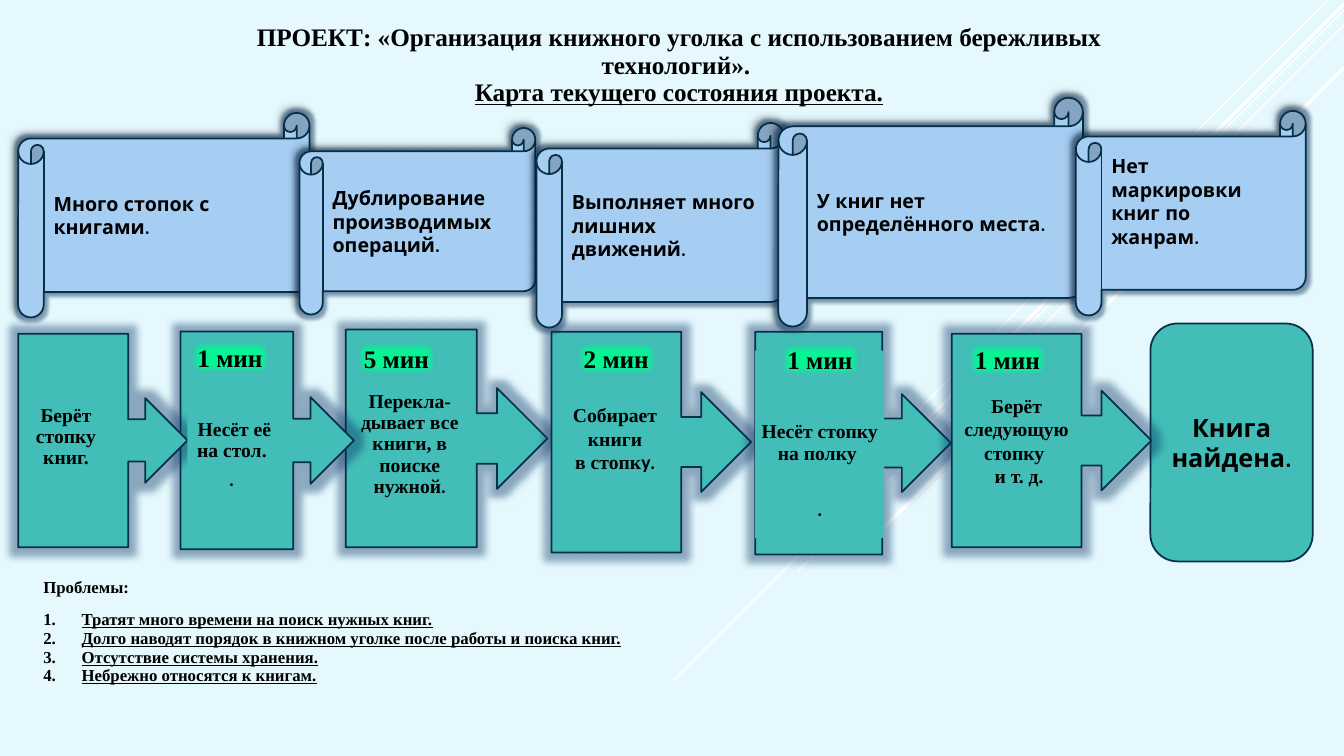
import pptx
import pptx.util
import pptx.dml.color
import pptx.enum.shapes
import pptx.enum.text
import pptx.oxml
import pptx.oxml.ns
from pptx.util import Inches

SHAPES = pptx.enum.shapes.MSO_SHAPE
ALIGN = pptx.enum.text.PP_ALIGN
ANCHOR = pptx.enum.text.MSO_ANCHOR
DRAWING = pptx.oxml.ns.nsdecls("a")
SERIF, ROUNDED = "Times New Roman", "Quicksand"
TEAL, SKY, GREEN, NAVY = "42BDB7", "A6CEF3", "08F696", "043148"
TIGHT = (0.01, 0.01, 0.01, 0.01)
ROOMY = (0.1, 0.05, 0.1, 0.05)

GLOW = '<a:glow rad="{}"><a:srgbClr val="052F61"><a:alpha val="40000"/></a:srgbClr></a:glow>'
STEP_GLOW = GLOW.format(139700)
SCROLL_GLOW = GLOW.format(63500) + (
    '<a:outerShdw blurRad="50800" dist="38100" dir="13500000">'
    '<a:srgbClr val="000000"><a:alpha val="40000"/></a:srgbClr></a:outerShdw>')
SOFT_EDGE = '<a:softEdge rad="63500"/>'


def color(value):
    return pptx.dml.color.RGBColor.from_string(value)


class ProcessMap:
    def __init__(self, page):
        self.page = page

    def effects(self, shape, content=""):
        properties = shape._element.spPr
        for old in properties.findall(pptx.oxml.ns.qn("a:effectLst")):
            properties.remove(old)
        properties.append(pptx.oxml.parse_xml(
            f"<a:effectLst {DRAWING}>{content}</a:effectLst>"))

    def ray(self, start, end, width):
        line = self.page.shapes.add_connector(
            pptx.enum.shapes.MSO_CONNECTOR.STRAIGHT, *map(Inches, start + end))
        line.line.color.rgb = color("FFFFFF")
        line.line.width = pptx.util.Pt(width)
        self.effects(line)

    def shape(self, kind, place, fill, outline=False, effects=""):
        shape = self.page.shapes.add_shape(kind, *map(Inches, place))
        shape.fill.solid()
        shape.fill.fore_color.rgb = color(fill)
        if outline:
            shape.line.color.rgb = color(NAVY)
            shape.line.width = pptx.util.Pt(1.25)
        else:
            shape.line.fill.background()
        self.effects(shape, effects)
        return shape

    def text_box(self, place):
        return self.page.shapes.add_textbox(*map(Inches, place))

    def style(self, para, size=14, font=SERIF, underline=None):
        para.font.size = pptx.util.Pt(size)
        para.font.name = font
        para.font.bold = True
        para.font.underline = underline
        para.font.color.rgb = color("000000")

    def put_text(self, box, texts, size=14, font=SERIF, align=ALIGN.CENTER,
                 insets=ROOMY, anchor=ANCHOR.MIDDLE, spacing=None, after=None, wrap=True):
        """Each text is a string or a list of (words, font) spans."""
        frame = box.text_frame
        frame.word_wrap = wrap
        frame.vertical_anchor = anchor
        (frame.margin_left, frame.margin_top,
         frame.margin_right, frame.margin_bottom) = map(Inches, insets)
        for index, text in enumerate(texts):
            para = frame.paragraphs[0] if index == 0 else frame.add_paragraph()
            para.alignment = align
            if spacing:
                para.line_spacing = spacing
            if after:
                para.space_after = pptx.util.Pt(after)
            self.style(para, size, font)
            for words, face in [(text, font)] if isinstance(text, str) else text:
                span = para.add_run()
                span.text = words
                if face != font:
                    span.font.name = face
        return frame

    def step(self, *place):
        return self.shape(SHAPES.RIGHT_ARROW_CALLOUT, place, TEAL, True, STEP_GLOW)

    def scroll(self, place, text, bottom=0.05):
        box = self.shape(SHAPES.HORIZONTAL_SCROLL, place, SKY, True, SCROLL_GLOW)
        self.put_text(box, [text], font=ROUNDED, align=ALIGN.LEFT,
                      insets=(0.1, 0.05, 0.1, bottom))

    def duration(self, left, top, text):
        box = self.shape(SHAPES.RECTANGLE, (left, top, 0.85, 0.4), GREEN, effects=SOFT_EDGE)
        frame = self.put_text(box, [text], 18, align=ALIGN.LEFT, anchor=ANCHOR.TOP, wrap=False)
        frame.auto_size = pptx.enum.text.MSO_AUTO_SIZE.SHAPE_TO_FIT_TEXT

    def problems(self, place, heading, items):
        table = self.page.shapes.add_table(1, 1, *map(Inches, place)).table
        table.first_row = table.horz_banding = False
        table._tbl.tblPr.find(pptx.oxml.ns.qn("a:tableStyleId")).text = \
            "{2D5ABB26-0587-4C30-8999-92F81FD0307C}"
        cell = table.cell(0, 0)
        cell.fill.background()
        cell.margin_left = cell.margin_right = Inches(0.12)
        cell.margin_top = cell.margin_bottom = 0
        title = cell.text_frame.paragraphs[0]
        title.text = heading
        title.line_spacing = 1.15
        title.space_after = pptx.util.Pt(10)
        self.style(title, 12)
        for item in items:
            para = cell.text_frame.add_paragraph()
            para.text = item
            properties = para._p.get_or_add_pPr()
            properties.set("marL", str(Inches(0.38)))
            properties.set("indent", str(-Inches(0.38)))
            properties.append(pptx.oxml.parse_xml(
                f'<a:buAutoNum {DRAWING} type="arabicPeriod"/>'))
            self.style(para, 12, underline=True)


def main():
    deck = pptx.Presentation()
    deck.slide_width, deck.slide_height = Inches(13.33), Inches(7.5)
    page = deck.slides.add_slide(deck.slide_layouts[6])
    page.background.fill.solid()
    page.background.fill.fore_color.rgb = color("E4F8FD")
    chart = ProcessMap(page)

    # Diagonal rays
    for start, end, width in (
            ((13.16, 0.01), (9, 4.18), 1), ((13.33, 0.1), (6.68, 6.75), 1),
            ((13.33, 0.25), (7.91, 5.67), 1), ((13.33, 0.04), (8.02, 5.34), 2.5),
            ((13.33, 0.67), (8.58, 5.42), 2.5)):
        chart.ray(start, end, width)

    # Process steps
    for place in ((3.43, 3.27, 2, 2.16), (5.47, 3.29, 1.98, 2.19), (7.49, 3.29, 1.94, 2.21),
                  (1.79, 3.29, 1.72, 2.16), (0.18, 3.31, 1.68, 2.12)):
        chart.step(*place)

    # Step texts
    chart.put_text(chart.text_box((5.51, 3.77, 1.23, 1.16)),
                   ["Собирает ", "книги ", [("в стопк", SERIF), ("у. ", "Calibri")]], insets=TIGHT)
    take = chart.shape(SHAPES.RECTANGLE, (0.23, 3.72, 0.85, 1.23), TEAL)
    chart.put_text(take, ["Берёт стопку книг."], insets=TIGHT, spacing=0.9, after=5)
    carry = chart.shape(SHAPES.RECTANGLE, (1.86, 3.45, 0.93, 1.86), TEAL)
    chart.put_text(carry, ["Несёт её на стол. ", [(". ", ROUNDED)]],
                   insets=(0.01, 0.28, 0.01, 0.01), spacing=0.9, after=5)
    chart.put_text(chart.text_box((3.51, 3.74, 1.11, 1.34)),
                   [[("Перекла-дывает все книги, в поиске нужной", SERIF), (".", ROUNDED)]],
                   insets=TIGHT, spacing=0.9, after=5)
    shelve = chart.shape(SHAPES.RECTANGLE, (7.49, 3.48, 1.28, 1.86), TEAL)
    frame = chart.put_text(shelve, ["Несёт стопку на полку ", [(".", ROUNDED)]],
                           insets=(0.01, 0.54, 0.01, 0.01), spacing=0.9, after=5)
    frame.paragraphs[0].space_after = pptx.util.Pt(25)

    # Title
    frame = chart.put_text(
        chart.text_box((0.21, 0.11, 13.05, 1)),
        ["ПРОЕКТ: «Организация книжного уголка с использованием бережливых",
         "технологий». "], 18, anchor=ANCHOR.BOTTOM, spacing=0.9)
    frame.paragraphs[1].add_line_break()
    subtitle = frame.paragraphs[1].add_run()
    subtitle.text = "Карта текущего состояния проекта."
    subtitle.font.underline = True

    # Problem list
    chart.problems((0.31, 5.71, 12.01, 1.59), "Проблемы:", (
        "Тратят много времени на поиск нужных книг.",
        "Долго наводят порядок в книжном уголке после работы и поиска книг.",
        "Отсутствие системы хранения.", "Небрежно относятся к книгам."))

    # Result
    found = chart.shape(SHAPES.ROUNDED_RECTANGLE, (11.41, 3.21, 1.61, 2.36), TEAL, True)
    chart.put_text(found, ["Книга найдена."], 18, ROUNDED)

    # Scrolls with the losses
    chart.scroll((0.18, 1.12, 2.89, 2.03), "Много стопок с книгами.")
    chart.scroll((2.97, 1.27, 2.34, 1.85), "Дублирование производимых операций.")
    chart.scroll((5.32, 1.22, 2.45, 2.03), "Выполняет много лишних движений.")
    chart.scroll((7.72, 0.97, 3.02, 2.27), "У книг нет определённого места.")
    chart.scroll((10.67, 1.1, 2.28, 2.03), "Нет маркировки книг по жанрам.", bottom=0.29)

    # Last step and durations
    chart.put_text(chart.step(9.44, 3.31, 1.98, 2.12), ["Берёт следующую стопку ", " и т. д."])
    for left, top, text in ((1.86, 3.35, "1 мин"), (3.51, 3.36, "5 мин"), (5.69, 3.36, "2 мин"),
                            (7.71, 3.37, "1 мин"), (9.57, 3.37, "1 мин")):
        chart.duration(left, top, text)

    deck.save("out.pptx")


if __name__ == "__main__":
    main()
